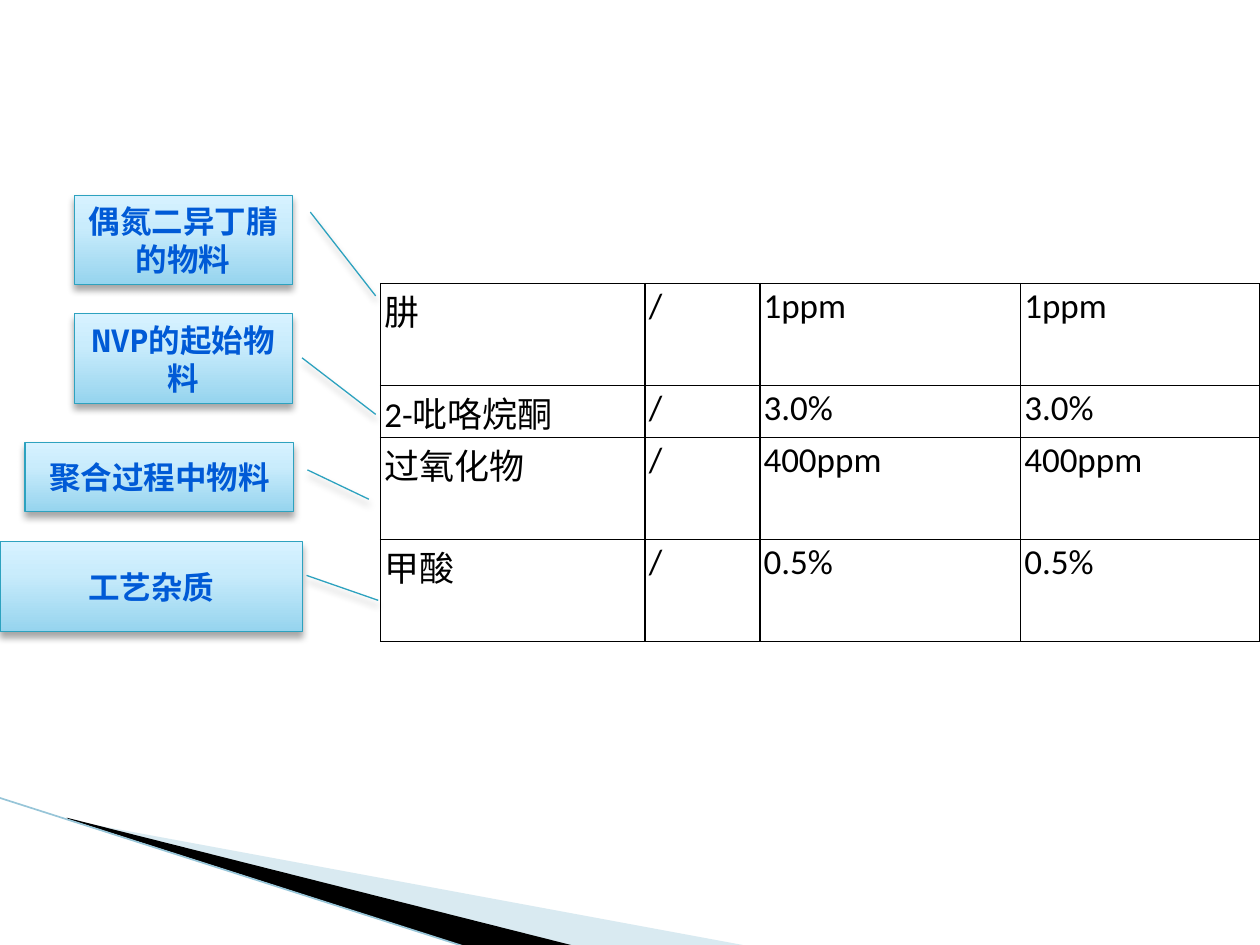
from copy import deepcopy

from lxml import etree
from pptx import Presentation
from pptx.dml.color import RGBColor
from pptx.enum import shapes, text
from pptx.oxml.ns import qn
from pptx.util import Inches, Pt

BLACK = RGBColor(0x00, 0x00, 0x00)
PALE_BLUE = RGBColor(0xA0, 0xCB, 0xDC)
EDGE_BLUE = RGBColor(0x97, 0xC5, 0xD8)
CALLOUT_LINE = RGBColor(0x2D, 0xA2, 0xBF)
CALLOUT_TEXT = RGBColor(0x00, 0x5A, 0xD6)
CALLOUT_STOPS = [
    (0, RGBColor(0x96, 0xD4, 0xEE)),
    (0.65, RGBColor(0xC9, 0xEC, 0xFC)),
    (1, RGBColor(0xD7, 0xF2, 0xFF)),
]


def add_color(parent, rgb, alpha=None):
    """Append a solid sRGB colour, with alpha in percent, to an XML element."""
    color = etree.SubElement(parent, qn("a:srgbClr"), val=str(rgb))
    if alpha is not None:
        etree.SubElement(color, qn("a:alpha"), val=str(alpha * 1000))


def add_border(cell, side):
    line = etree.SubElement(cell._tc.get_or_add_tcPr(), qn(f"a:{side}"), w=str(Pt(1)))
    add_color(etree.SubElement(line, qn("a:solidFill")), BLACK)


prs = Presentation()
prs.slide_width, prs.slide_height = Inches(10), Inches(7.5)
slide = prs.slides.add_slide(prs.slide_layouts[6])

# Corner decoration
wedges = [
    ([(0.55, 6.51), (5.95, 7.51), (4.56, 7.51), (0.55, 6.5)], PALE_BLUE, 40),
    ([(0.53, 6.49), (4.57, 7.51), (3.72, 7.52), (0.54, 6.5)], BLACK, 100),
]
for points, color, alpha in wedges:
    corners = [(Inches(x), Inches(y)) for x, y in points]
    builder = slide.shapes.build_freeform(*corners[0])
    builder.add_line_segments(corners[1:])
    wedge = builder.convert_to_shape()
    wedge.shadow.inherit = False
    wedge.line.fill.background()
    wedge.fill.solid()
    wedge.fill.fore_color.rgb = color
    solid = wedge._element.spPr.find(qn("a:solidFill"))
    etree.SubElement(solid[0], qn("a:alpha"), val=str(alpha * 1000))

edge = slide.shapes.add_connector(
    shapes.MSO_CONNECTOR.STRAIGHT,
    Inches(-0.01), Inches(6.33), Inches(3.71), Inches(7.52))
edge.line.color.rgb = EDGE_BLUE
edge.line.width = Pt(0.95)
etree.SubElement(edge._element.spPr, qn("a:effectLst"))

# Impurity limits
limits = [
    ("肼", "/", "1ppm", "1ppm"),
    ("2-吡咯烷酮", "/", "3.0%", "3.0%"),
    ("过氧化物", "/", "400ppm", "400ppm"),
    ("甲酸", "/", "0.5%", "0.5%"),
]
table = slide.shapes.add_table(
    4, 4, Inches(3.02), Inches(2.25), Inches(6.98), Inches(2.84)).table
table.first_row = table.horz_banding = False
for column, width in zip(table.columns, (2.1, 0.91, 2.07, 1.9)):
    column.width = Inches(width)
for row, height, values in zip(table.rows, (0.81, 0.41, 0.81, 0.81), limits):
    row.height = Inches(height)
    for cell, value in zip(row.cells, values):
        cell.margin_left = cell.margin_right = Inches(0.03)
        cell.margin_top, cell.margin_bottom = Inches(0.01), 0
        for side in ("lnL", "lnR", "lnT", "lnB"):
            add_border(cell, side)
        cell.fill.background()
        cell.text = value
        font = cell.text_frame.paragraphs[0].runs[0].font
        font.name, font.size = "Calibri", Pt(20)
        font.color.rgb = BLACK

# Callouts naming where each impurity comes from: position, pointer, text
sources = [
    ((0.59, 1.55, 1.73, 0.71), (0.188, -0.083, 1.125, -0.383), "偶氮二异丁腈的物料"),
    ((0.59, 2.49, 1.73, 0.71), (0.493, -0.045, 1.125, -0.383), "NVP的起始物料"),
    ((0.2, 3.51, 2.13, 0.55), (0.399, -0.052, 0.823, -0.281), "聚合过程中物料"),
    ((0, 4.3, 2.4, 0.71), (0.376, -0.014, 0.655, -0.251), "工艺杂质"),
]
for box, pointer, source in sources:
    callout = slide.shapes.add_shape(
        shapes.MSO_SHAPE.LINE_CALLOUT_1, *(Inches(v) for v in box))
    for i, value in enumerate(pointer):
        callout.adjustments[i] = value
    properties = callout._element.spPr
    properties.find(qn("a:xfrm")).set("flipH", "1")

    callout.fill.gradient()
    callout.fill.gradient_angle = 90
    stop_list = properties.find(qn("a:gradFill")).find(qn("a:gsLst"))
    stop_list.insert(1, deepcopy(stop_list[0]))
    for stop, (position, color) in zip(callout.fill.gradient_stops, CALLOUT_STOPS):
        stop.position = position
        stop.color.rgb = color
    callout.line.color.rgb = CALLOUT_LINE
    callout.line.width = Pt(0.75)

    callout.shadow.inherit = False
    shadow = etree.SubElement(
        properties.find(qn("a:effectLst")), qn("a:outerShdw"),
        blurRad=str(Pt(4)), dist=str(Pt(3)), dir="5400000", rotWithShape="0")
    add_color(shadow, BLACK, 35)

    frame = callout.text_frame
    frame.word_wrap = True
    frame.vertical_anchor = text.MSO_ANCHOR.MIDDLE
    frame.text = source
    paragraph = frame.paragraphs[0]
    paragraph.alignment = text.PP_ALIGN.CENTER
    font = paragraph.runs[0].font
    for name, value in {"name": "Noto Sans Mono", "size": Pt(18), "bold": True}.items():
        setattr(font, name, value)
    font.color.rgb = CALLOUT_TEXT

prs.save("out.pptx")
